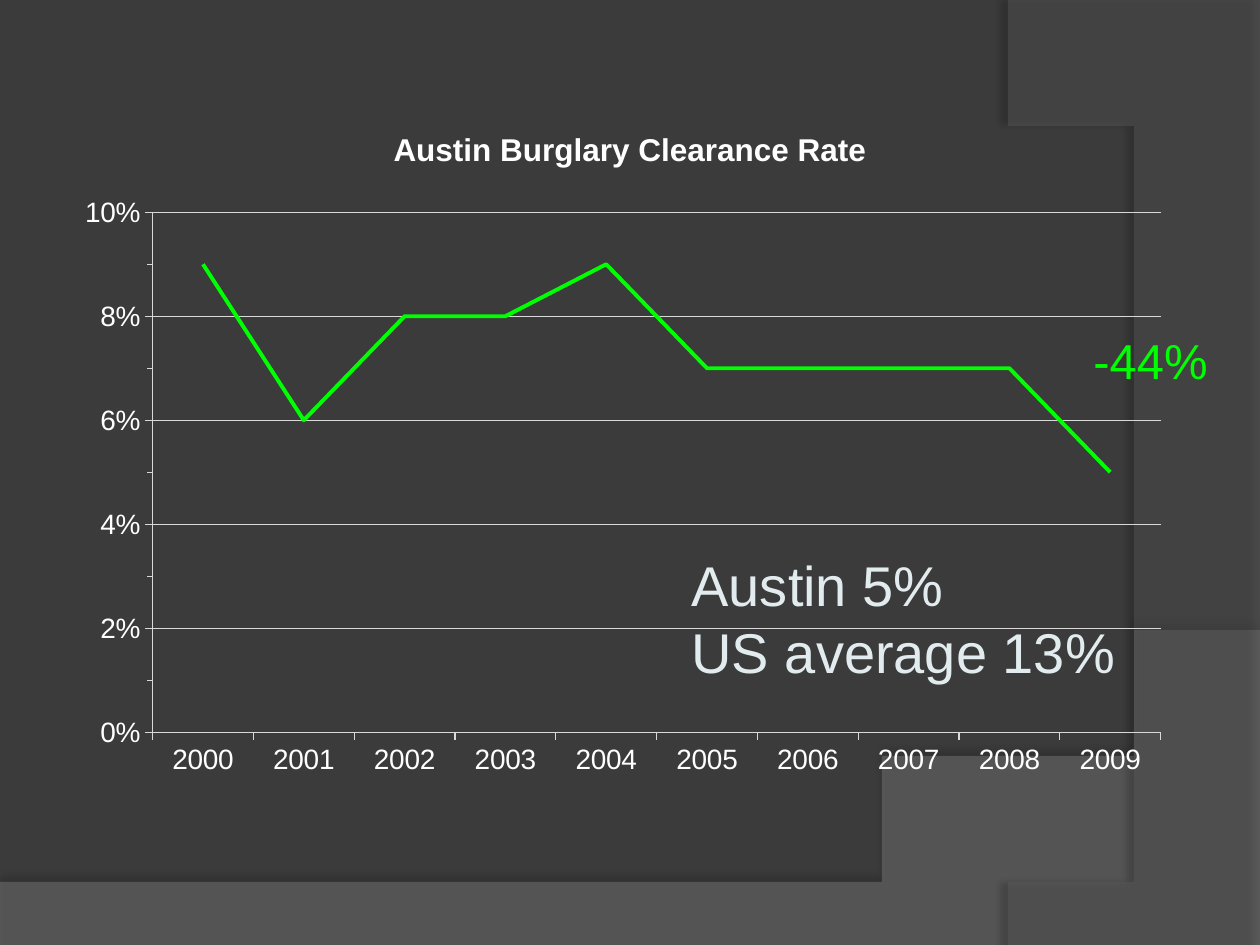
from dataclasses import dataclass

import pptx
import pptx.chart.data
import pptx.dml.color
import pptx.enum.chart
import pptx.enum.text
import pptx.oxml
import pptx.oxml.ns
import pptx.util
from pptx.dml.color import RGBColor

WIDTH = pptx.util.Inches(10)
HEIGHT = pptx.util.Inches(7.5)
FONT = "Arial"
BACKDROP = RGBColor(0x3B, 0x3B, 0x3B)
LOW_GREY = RGBColor(0x7F, 0x7F, 0x7F)
SIDE_GREY = RGBColor(0x5E, 0x5E, 0x5E)
WHITE = RGBColor(0xFF, 0xFF, 0xFF)
GRID_GREY = RGBColor(0xD9, 0xD9, 0xD9)
GREEN = RGBColor(0x00, 0xFF, 0x00)
PALE = RGBColor(0xE2, 0xEC, 0xEF)
CURVE_STEPS = 40

Point = tuple[float, float]


@dataclass
class Swoosh:
    """An outline in inches: straight corners, then one Bezier curve."""
    corners: list[Point]
    curve: list[Point]
    color: RGBColor
    opacity: int
    shadow_opacity: int
    shadow_distance: float
    shadow_angle: int


@dataclass
class Callout:
    """Unwrapped text; the frame is given in shares of the slide."""
    lines: list[str]
    left: float
    top: float
    width: float
    height: float
    size: int
    color: RGBColor


SWOOSHES = [
    Swoosh([(0, 7.05), (0, 7.51), (10, 7.51), (10, 5.2)],
           [(5.59, 7.29), (3.91, 7.19), (0, 7.05)], LOW_GREY, 45, 35, 3.5, 270),
    Swoosh([(10, 0.02), (10, 7.5), (8.21, 7.5)],
           [(9.35, 6.19), (10.18, 3), (8, 0)], SIDE_GREY, 40, 45, 4, 180),
]
CALLOUTS = [
    Callout(["-44%"], 0.858, 0.343, 0.112, 0.076, 28, GREEN),
    Callout(["Austin 5%", "US average 13%"], 0.539, 0.576, 0.359, 0.157, 32, PALE),
]
YEARS = [str(year) for year in range(2000, 2010)]
RATES = [0.09, 0.06, 0.08, 0.08, 0.09, 0.07, 0.07, 0.07, 0.07, 0.05]


def bezier(start: Point, controls: list[Point]) -> list[Point]:
    points = [start, *controls]
    weights = (1, 3, 3, 1)
    result = []
    for step in range(1, CURVE_STEPS + 1):
        t = step / CURVE_STEPS
        shares = [w * (1 - t) ** (3 - i) * t ** i for i, w in enumerate(weights)]
        result.append(tuple(sum(s * p[axis] for s, p in zip(shares, points))
                            for axis in (0, 1)))
    return result


def draw_swoosh(page, swoosh: Swoosh) -> None:
    outline = swoosh.corners + bezier(swoosh.corners[-1], swoosh.curve)
    builder = page.shapes.build_freeform(*outline[0], scale=pptx.util.Inches(1))
    builder.add_line_segments(outline[1:], close=True)
    shape = builder.convert_to_shape()
    shape.line.fill.background()
    shape.fill.solid()
    shape.fill.fore_color.rgb = swoosh.color
    color = shape.fill._xPr.find(".//" + pptx.oxml.ns.qn("a:srgbClr"))
    color.append(pptx.oxml.parse_xml(
        f'<a:alpha {pptx.oxml.ns.nsdecls("a")} val="{swoosh.opacity * 1000}"/>'))
    shape._element.spPr.append(pptx.oxml.parse_xml(
        f'<a:effectLst {pptx.oxml.ns.nsdecls("a")}>'
        f'<a:outerShdw blurRad="{pptx.util.Pt(4)}" '
        f'dist="{pptx.util.Pt(swoosh.shadow_distance)}" '
        f'dir="{swoosh.shadow_angle * 60000}" rotWithShape="0">'
        f'<a:srgbClr val="000000"><a:alpha val="{swoosh.shadow_opacity * 1000}"/>'
        '</a:srgbClr></a:outerShdw></a:effectLst>'))


def draw_callout(page, callout: Callout) -> None:
    box = page.shapes.add_textbox(
        int(WIDTH * callout.left), int(HEIGHT * callout.top),
        int(WIDTH * callout.width), int(HEIGHT * callout.height))
    frame = box.text_frame
    frame.word_wrap = False
    frame.auto_size = pptx.enum.text.MSO_AUTO_SIZE.SHAPE_TO_FIT_TEXT
    for index, line in enumerate(callout.lines):
        para = frame.add_paragraph() if index else frame.paragraphs[0]
        span = para.add_run()
        span.text = line
        span.font.name = FONT
        span.font.size = pptx.util.Pt(callout.size)
        span.font.color.rgb = callout.color


def place_by_layout(parent, target: str = "", **shares: float) -> None:
    """Give a chart part a manual layout in shares of the chart."""
    for old in parent.findall(pptx.oxml.ns.qn("c:layout")):
        parent.remove(old)
    inner = f'<c:layoutTarget val="{target}"/>' if target else ""
    modes = "".join(f'<c:{axis}Mode val="edge"/>' for axis in "xy")
    values = "".join(f'<c:{key} val="{share}"/>' for key, share in shares.items())
    layout = pptx.oxml.parse_xml(
        f'<c:layout {pptx.oxml.ns.nsdecls("c")}><c:manualLayout>'
        f'{inner}{modes}{values}</c:manualLayout></c:layout>')
    text = parent.find(pptx.oxml.ns.qn("c:tx"))
    parent.insert(0 if text is None else 1, layout)


def style_line(line, color: RGBColor, width: float) -> None:
    line.color.rgb = color
    line.width = pptx.util.Pt(width)


def draw_chart(page) -> None:
    data = pptx.chart.data.CategoryChartData(number_format="0%")
    data.categories = YEARS
    data.add_series("Series 1", RATES)
    chart = page.shapes.add_chart(
        pptx.enum.chart.XL_CHART_TYPE.LINE,
        int(WIDTH * 0.05), int(HEIGHT * 0.123),
        int(WIDTH * 0.889), int(HEIGHT * 0.711), data).chart
    chart.has_legend = False
    chart.font.name = FONT
    chart.font.size = pptx.util.Pt(10)
    chart.font.color.rgb = WHITE

    chart.has_title = True
    span = chart.chart_title.text_frame.paragraphs[0].add_run()
    span.text = "Austin Burglary Clearance Rate"
    span.font.name = FONT
    span.font.size = pptx.util.Pt(18)
    span.font.bold = True
    span.font.color.rgb = WHITE
    place_by_layout(chart.chart_title._element, x=0.29, y=0.01)
    place_by_layout(chart._chartSpace.chart.plotArea, "inner",
                    x=0.08, y=0.143, w=0.9, h=0.774)

    tick = pptx.enum.chart.XL_TICK_MARK
    for axis in (chart.category_axis, chart.value_axis):
        axis.major_tick_mark = tick.OUTSIDE
        axis.minor_tick_mark = tick.NONE
        axis.tick_labels.font.name = FONT
        axis.tick_labels.font.size = pptx.util.Pt(16)
        axis.tick_labels.font.color.rgb = WHITE
        style_line(axis.format.line, GRID_GREY, 0.75)
    rates = chart.value_axis
    rates.minimum_scale, rates.maximum_scale = 0, 0.1
    rates.major_unit, rates.minor_unit = 0.02, 0.01
    rates.minor_tick_mark = tick.OUTSIDE
    rates.tick_labels.number_format = "0%"
    rates.tick_labels.number_format_is_linked = False
    rates.has_major_gridlines = True
    style_line(rates.major_gridlines.format.line, GRID_GREY, 0.75)

    plot = chart.plots[0]
    plot.vary_by_categories = False
    series = plot.series[0]
    series.smooth = False
    series.marker.style = pptx.enum.chart.XL_MARKER_STYLE.NONE
    style_line(series.format.line, GREEN, 2.25)


def main() -> None:
    deck = pptx.Presentation()
    deck.slide_width, deck.slide_height = WIDTH, HEIGHT
    page = deck.slides.add_slide(deck.slide_layouts.get_by_name("Blank"))
    page.background.fill.solid()
    page.background.fill.fore_color.rgb = BACKDROP
    for swoosh in SWOOSHES:
        draw_swoosh(page, swoosh)
    draw_chart(page)
    for callout in CALLOUTS:
        draw_callout(page, callout)
    deck.save("out.pptx")


if __name__ == "__main__":
    main()
